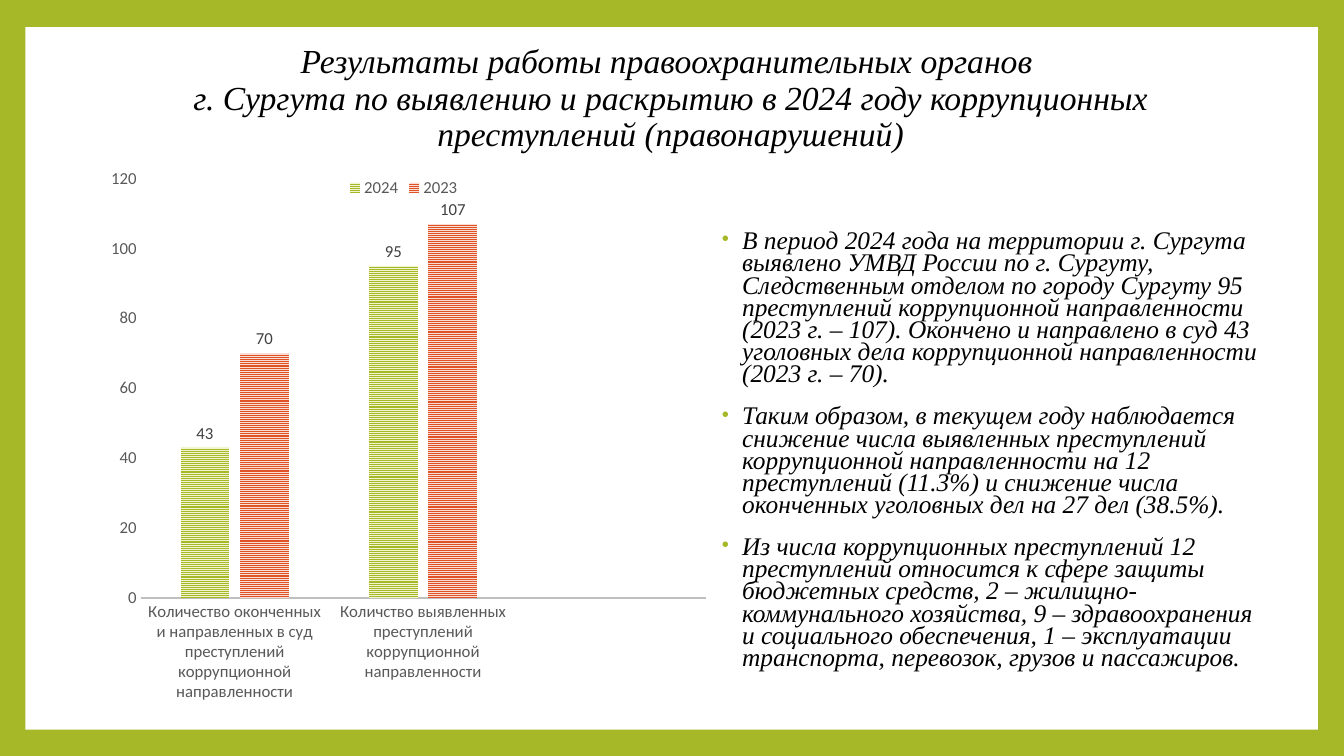
"""Build the slide on corruption crimes in Surgut: a title, a column chart and a list."""
from dataclasses import dataclass
from typing import Any

from lxml.etree import SubElement
from pptx import Presentation
from pptx.chart.data import CategoryChartData
from pptx.dml.color import RGBColor
from pptx.enum.chart import XL_CHART_TYPE, XL_LABEL_POSITION, XL_LEGEND_POSITION, XL_TICK_MARK
from pptx.enum.dml import MSO_PATTERN
from pptx.enum.shapes import MSO_SHAPE
from pptx.enum.text import MSO_ANCHOR, MSO_AUTO_SIZE, PP_ALIGN
from pptx.oxml import parse_xml
from pptx.oxml.ns import nsdecls, qn
from pptx.util import Inches, Pt

WIDTH, HEIGHT = Inches(13.33), Inches(7.5)
GREEN = "A6B727"


@dataclass
class Box:
    """A place on the slide, in percent of its width and height."""
    left: float
    top: float
    width: float
    height: float

    def place(self) -> dict[str, int]:
        """Return the place in slide units."""
        return {
            "left": int(WIDTH * self.left / 100),
            "top": int(HEIGHT * self.top / 100),
            "width": int(WIDTH * self.width / 100),
            "height": int(HEIGHT * self.height / 100),
        }


@dataclass
class Year:
    """One series of the chart with its hatch colours."""
    name: str
    counts: tuple[int | None, ...]
    fore: str
    back: str


PANEL = Box(1.88, 3.6, 96.17, 92.93)
TITLE = Box(9.38, 8.93, 81.02, 8.4)
CHART = Box(7.58, 22, 45.01, 72.8)
BODY = Box(52.59, 30, 42.61, 59.87)

HEAD = (
    "Результаты работы правоохранительных органов ",
    "г. Сургута по выявлению и раскрытию в 2024 году коррупционных преступлений (правонарушений)",
)
POINTS = (
    "В период 2024 года на территории г. Сургута выявлено УМВД России по г. Сургуту, "
    "Следственным отделом по городу Сургуту 95 преступлений коррупционной направленности "
    "(2023 г. – 107). Окончено и направлено в суд 43 уголовных дела коррупционной "
    "направленности (2023 г. – 70).",
    "Таким образом, в текущем году наблюдается снижение числа выявленных преступлений "
    "коррупционной направленности на 12 преступлений (11.3%) и снижение числа оконченных "
    "уголовных дел на 27 дел (38.5%).",
    "Из числа коррупционных преступлений 12 преступлений относится к сфере защиты бюджетных "
    "средств, 2 – жилищно-коммунального хозяйства, 9 – здравоохранения и социального "
    "обеспечения, 1 – эксплуатации транспорта, перевозок, грузов и пассажиров.",
)
GROUPS = (
    "Количество оконченных и направленных в суд преступлений коррупционной направленности",
    "Количство выявленных преступлений коррупционной направленности",
    "",
)
YEARS = (
    Year("2024", (43, 95, None), GREEN, "F0F5D0"),
    Year("2023", (70, 107, None), "DF5327", "F9DDD4"),
)
PLOT = {"x": 0.068, "y": 0.022, "w": 0.936, "h": 0.762}


def tint(code: str) -> RGBColor:
    """Turn a hex string into a colour."""
    return RGBColor.from_string(code)


def apply(item: Any, values: dict[str, Any]) -> None:
    """Set every attribute named in the dict."""
    for name, value in values.items():
        setattr(item, name, value)


def style(font: Any, size: float, code: str, name: str = "Calibri", slant: bool = False) -> None:
    """Format a font."""
    apply(font, {"size": Pt(size), "name": name, "italic": slant})
    font.color.rgb = tint(code)


def script(run: Any, text: str, size: float) -> None:
    """Write a run in the black italic serif of the slide."""
    run.text = text
    style(run.font, size, "000000", "Times New Roman", True)


def draw_panel(slide: Any) -> None:
    """Draw the white panel behind the content."""
    panel = slide.shapes.add_shape(MSO_SHAPE.RECTANGLE, **PANEL.place())
    panel.shadow.inherit = False
    panel.fill.solid()
    panel.fill.fore_color.rgb = tint("FFFFFF")
    panel.line.fill.background()
    slide.shapes.title.element.addprevious(panel.element)


def write_title(shape: Any) -> None:
    """Fill the title placeholder."""
    apply(shape, TITLE.place())
    frame = shape.text_frame
    apply(frame, {"auto_size": MSO_AUTO_SIZE.NONE, "word_wrap": True,
                  "vertical_anchor": MSO_ANCHOR.MIDDLE})
    para = frame.paragraphs[0]
    apply(para, {"alignment": PP_ALIGN.CENTER, "line_spacing": 0.9})
    for row, text in enumerate(HEAD):
        if row:
            para.add_line_break()
        script(para.add_run(), text, 24)


def add_bullet(para: Any) -> None:
    """Give a paragraph a small green bullet."""
    props = para._p.get_or_add_pPr()
    apply_xml = {"marL": Inches(0.25), "indent": Inches(-0.2)}
    for name, value in apply_xml.items():
        props.set(name, str(value))
    SubElement(SubElement(props, qn("a:buClr")), qn("a:srgbClr"), val=GREEN)
    SubElement(props, qn("a:buSzPct"), val="80000")
    SubElement(props, qn("a:buFont"), typeface="Arial")
    SubElement(props, qn("a:buChar"), char="•")


def write_body(shape: Any) -> None:
    """Fill the body placeholder with the list."""
    apply(shape, BODY.place())
    frame = shape.text_frame
    apply(frame, {"auto_size": MSO_AUTO_SIZE.NONE, "word_wrap": True,
                  "vertical_anchor": MSO_ANCHOR.TOP})
    for row, text in enumerate(POINTS):
        para = frame.add_paragraph() if row else frame.paragraphs[0]
        apply(para, {"alignment": PP_ALIGN.LEFT, "line_spacing": 0.73, "space_before": Pt(14)})
        add_bullet(para)
        script(para.add_run(), text, 18.1)


def set_plot(chart: Any) -> None:
    """Fix the inner plot area within the chart."""
    area = chart._chartSpace.chart.plotArea
    for old in area.findall(qn("c:layout")):
        area.remove(old)
    sides = "".join(f'<c:{key}Mode val="edge"/>' for key in "xy")
    sizes = "".join(f'<c:{key} val="{share}"/>' for key, share in PLOT.items())
    area.insert(0, parse_xml(
        f'<c:layout {nsdecls("c")}><c:manualLayout><c:layoutTarget val="inner"/>'
        f'{sides}{sizes}</c:manualLayout></c:layout>'))


def draw_chart(slide: Any) -> None:
    """Draw the clustered columns."""
    data = CategoryChartData()
    data.categories = GROUPS
    for year in YEARS:
        data.add_series(year.name, year.counts)
    place = CHART.place()
    chart = slide.shapes.add_chart(XL_CHART_TYPE.COLUMN_CLUSTERED, place["left"], place["top"],
                                   place["width"], place["height"], data).chart
    style(chart.font, 10, "000000")
    apply(chart, {"has_title": False, "has_legend": True})
    apply(chart.legend, {"position": XL_LEGEND_POSITION.TOP, "include_in_layout": False})
    style(chart.legend.font, 12, "595959")
    for axis in (chart.category_axis, chart.value_axis):
        apply(axis, {"major_tick_mark": XL_TICK_MARK.NONE, "minor_tick_mark": XL_TICK_MARK.NONE,
                     "has_major_gridlines": False})
        style(axis.tick_labels.font, 12, "595959")
    line = chart.category_axis.format.line
    line.color.rgb = tint("BFBFBF")
    line.width = Pt(1.5)
    apply(chart.value_axis, {"minimum_scale": 0, "maximum_scale": 120, "major_unit": 20})
    chart.value_axis.format.line.fill.background()
    plot = chart.plots[0]
    apply(plot, {"gap_width": 164, "overlap": -22, "vary_by_categories": False})
    for year, bars in zip(YEARS, plot.series):
        fill = bars.format.fill
        fill.patterned()
        fill.pattern = MSO_PATTERN.NARROW_HORIZONTAL
        fill.fore_color.rgb, fill.back_color.rgb = tint(year.fore), tint(year.back)
        apply(bars.data_labels, {"show_value": True, "position": XL_LABEL_POSITION.OUTSIDE_END})
        style(bars.data_labels.font, 12, "404040")
    set_plot(chart)


def main() -> None:
    """Build and save the deck."""
    deck = Presentation()
    apply(deck, {"slide_width": WIDTH, "slide_height": HEIGHT})
    slide = deck.slides.add_slide(deck.slide_layouts[1])
    slide.background.fill.solid()
    slide.background.fill.fore_color.rgb = tint(GREEN)
    draw_panel(slide)
    write_title(slide.shapes.title)
    write_body(slide.placeholders[1])
    draw_chart(slide)
    deck.save("out.pptx")


if __name__ == "__main__":
    main()
